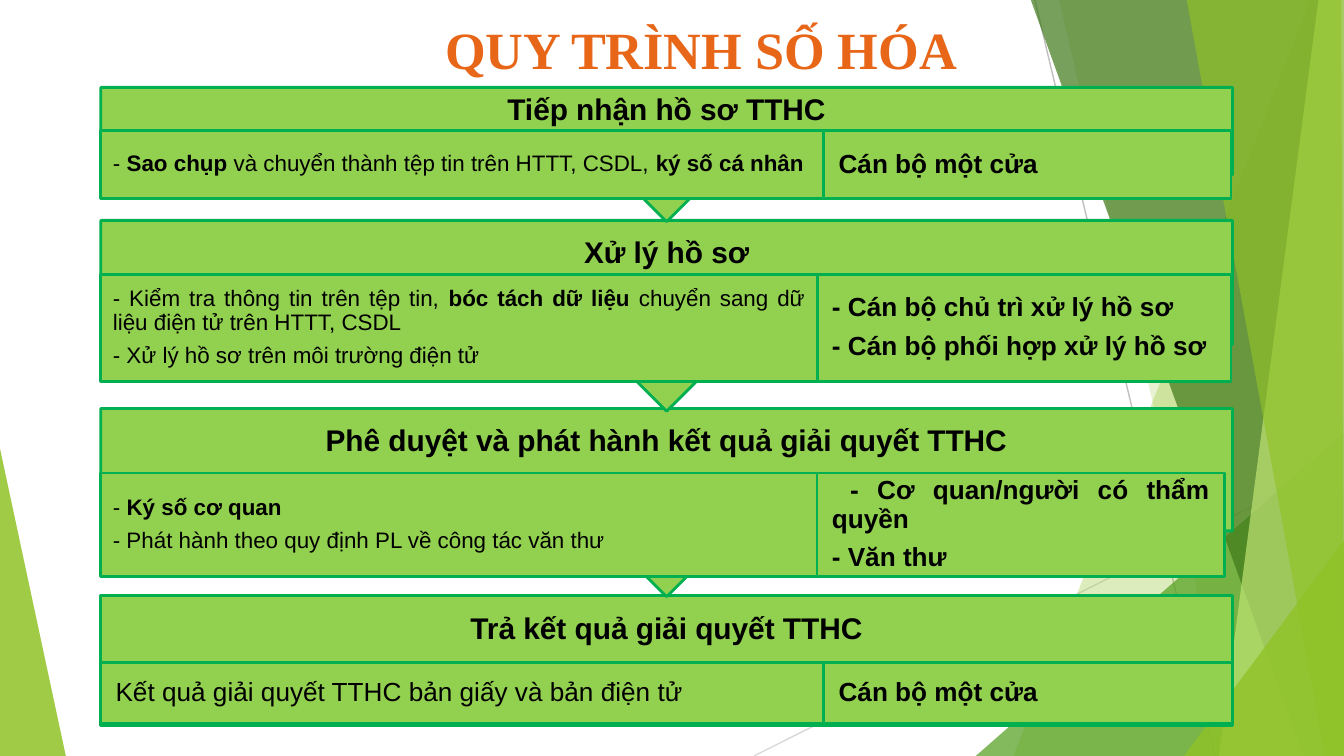
from lxml import etree
from pptx import Presentation
from pptx.dml.color import RGBColor
from pptx.enum.shapes import MSO_CONNECTOR, MSO_SHAPE
from pptx.enum.text import MSO_ANCHOR, PP_ALIGN
from pptx.oxml.ns import qn
from pptx.util import Inches, Pt

RECT = MSO_SHAPE.RECTANGLE
CALLOUT = MSO_SHAPE.UP_ARROW_CALLOUT
STRAIGHT = MSO_CONNECTOR.STRAIGHT
MIDDLE = MSO_ANCHOR.MIDDLE
CENTER, JUSTIFY = PP_ALIGN.CENTER, PP_ALIGN.JUSTIFY

# The slide is a grid of square cells, 100 to the inch
COLS, ROWS = 1000, 562.5
CELL = Inches(0.01)
LEFT, WIDTH = 75, 842

COLORS = {
    "box": "92D050", "edge": "00B050", "text": "000000", "title": "E76618",
    "lime": "90C226", "leaf": "54A021", "moss": "3F7819", "pale": "C0E474",
    "silver": "D9D9D9", "gray": "BFBFBF",
}

# Background facets: colour, opacity in percent, corners in grid cells
FACETS = [
    ("lime", 85, [(-1, 329), (49, ROWS), (-1, ROWS)]),
    ("lime", 30, [(975, 0), (754, ROWS), (1002, ROWS), (1001, 0)]),
    ("lime", 20, [(788, 0), (919, ROWS), (1001, ROWS), (1001, 0)]),
    ("leaf", 72, [(726, ROWS), (1000, 322), (1001, ROWS)]),
    ("moss", 70, [(767, 0), (970, ROWS), (1001, ROWS), (1001, 0)]),
    ("pale", 70, [(981, 0), (907, ROWS), (1001, ROWS), (1000, 0)]),
    ("lime", 65, [(883, 0), (986, ROWS), (1000, ROWS), (998, 0)]),
    ("lime", 80, [(881, ROWS), (1001, 401), (1001, ROWS)]),
]
RAYS = [("silver", (561, ROWS), (1001, 342)), ("gray", (770, 0), (904, ROWS))]

# Stages from back to front: outline, (top, height), header height,
# (top, height) of the row, its split and right end, heading,
# size and lines of the task, lines of the people. Stars mark bold words.
STAGES = [
    (RECT, (443, 97), 52, (493, 45), 613, 917, "Trả kết quả giải quyết TTHC",
     14, ["Kết quả giải quyết TTHC bản giấy và bản điện tử"],
     ["*Cán bộ một cửa*"]),
    (CALLOUT, (304, 140), 49, (352, 77), 608, 911,
     "Phê duyệt và phát hành kết quả giải quyết TTHC",
     12, ["- *Ký số cơ quan*",
          "- Phát hành theo quy định PL về công tác văn thư"],
     ["* - Cơ quan/người có thẩm quyền*", "*- Văn thư *"]),
    (CALLOUT, (164, 142), 50, (204, 80), 608, 916, "Xử lý hồ sơ",
     12, ["- Kiểm tra thông tin trên tệp tin, *bóc tách dữ liệu *"
          "chuyển sang dữ liệu điện tử trên HTTT, CSDL",
          "- Xử lý hồ sơ trên môi trường điện tử"],
     ["*- Cán bộ chủ trì xử lý hồ sơ*", "*- Cán bộ phối hợp xử lý hồ sơ*"]),
    (CALLOUT, (65, 100), 35, (97, 51), 613, 916, "Tiếp nhận hồ sơ TTHC",
     12, ["- *Sao chụp *và chuyển thành tệp tin trên HTTT, CSDL, "
          "*ký số cá nhân*"],
     ["*Cán bộ một cửa*"]),
]


def rgb(name):
    return RGBColor.from_string(COLORS[name])


def place(*cells):
    """Turn grid cells into lengths."""
    return [round(n * CELL) for n in cells]


def add_facet(slide, color, alpha, points):
    first, *rest = [place(*point) for point in points]
    pen = slide.shapes.build_freeform(*first)
    pen.add_line_segments(rest, close=True)
    facet = pen.convert_to_shape()
    facet.shadow.inherit = False
    facet.line.fill.background()
    facet.fill.solid()
    facet.fill.fore_color.rgb = rgb(color)
    tint = facet._element.spPr.find(".//" + qn("a:srgbClr"))
    etree.SubElement(tint, qn("a:alpha"), val=str(alpha * 1000))


def add_ray(slide, color, start, end):
    ray = slide.shapes.add_connector(STRAIGHT, *place(*start, *end))
    ray.line.color.rgb = rgb(color)
    ray.line.width = Pt(0.75)
    etree.SubElement(ray._element.spPr, qn("a:effectLst"))


def add_box(slide, kind, *cells):
    box = slide.shapes.add_shape(kind, *place(*cells))
    box.shadow.inherit = False
    box.fill.solid()
    box.fill.fore_color.rgb = rgb("box")
    box.line.color.rgb = rgb("edge")
    box.line.width = Pt(1.5)
    return box


def write(frame, lines, size, align, inset):
    """Fill a text frame; words between stars are bold."""
    frame.word_wrap = True
    frame.vertical_anchor = MIDDLE
    frame.margin_left = frame.margin_right = Inches(inset)
    frame.margin_top = frame.margin_bottom = Inches(0.02)
    for i, line in enumerate(lines):
        para = frame.add_paragraph() if i else frame.paragraphs[0]
        para.alignment = align
        para.line_spacing = 0.9
        para.space_before = Pt(size * 0.4 if i else 0)
        para.font.size = Pt(size)
        para.font.name = "Arial"
        para.font.color.rgb = rgb("text")
        for j, part in enumerate(line.split("*")):
            if part:
                run = para.add_run()
                run.text = part
                run.font.bold = j % 2 == 1


def add_stage(slide, kind, span, head, row, split, right, name,
              size, task, staff):
    box = add_box(slide, kind, LEFT, span[0], WIDTH, span[1])
    if kind == CALLOUT:
        box.rotation = 180
    label = slide.shapes.add_textbox(*place(LEFT, span[0], WIDTH, head))
    write(label.text_frame, [f"*{name}*"], 16, CENTER, 0.12)
    top, high = row
    left = add_box(slide, RECT, LEFT, top, split - LEFT, high)
    write(left.text_frame, task, size, JUSTIFY, 0.11 if size == 14 else 0.09)
    side = add_box(slide, RECT, split, top, right - split, high)
    write(side.text_frame, staff, 14, JUSTIFY, 0.11)


def set_title(slide, text):
    title = slide.shapes.title
    title.left, title.top, title.width, title.height = place(154, 7, 683, 65)
    frame = title.text_frame
    frame.text = text
    frame.vertical_anchor = MIDDLE
    frame.margin_left = Inches(0.62)
    frame.margin_bottom = Inches(0.11)
    para = frame.paragraphs[0]
    para.alignment = CENTER
    para.font.size = Pt(28)
    para.font.name = "Times New Roman"
    para.font.bold = True
    para.font.color.rgb = rgb("title")


def main():
    deck = Presentation()
    deck.slide_width, deck.slide_height = place(COLS, ROWS)
    slide = deck.slides.add_slide(deck.slide_layouts[5])
    set_title(slide, "QUY TRÌNH SỐ HÓA")
    for ray in RAYS:
        add_ray(slide, *ray)
    for facet in FACETS:
        add_facet(slide, *facet)
    for stage in STAGES:
        add_stage(slide, *stage)
    deck.save("out.pptx")


if __name__ == "__main__":
    main()
